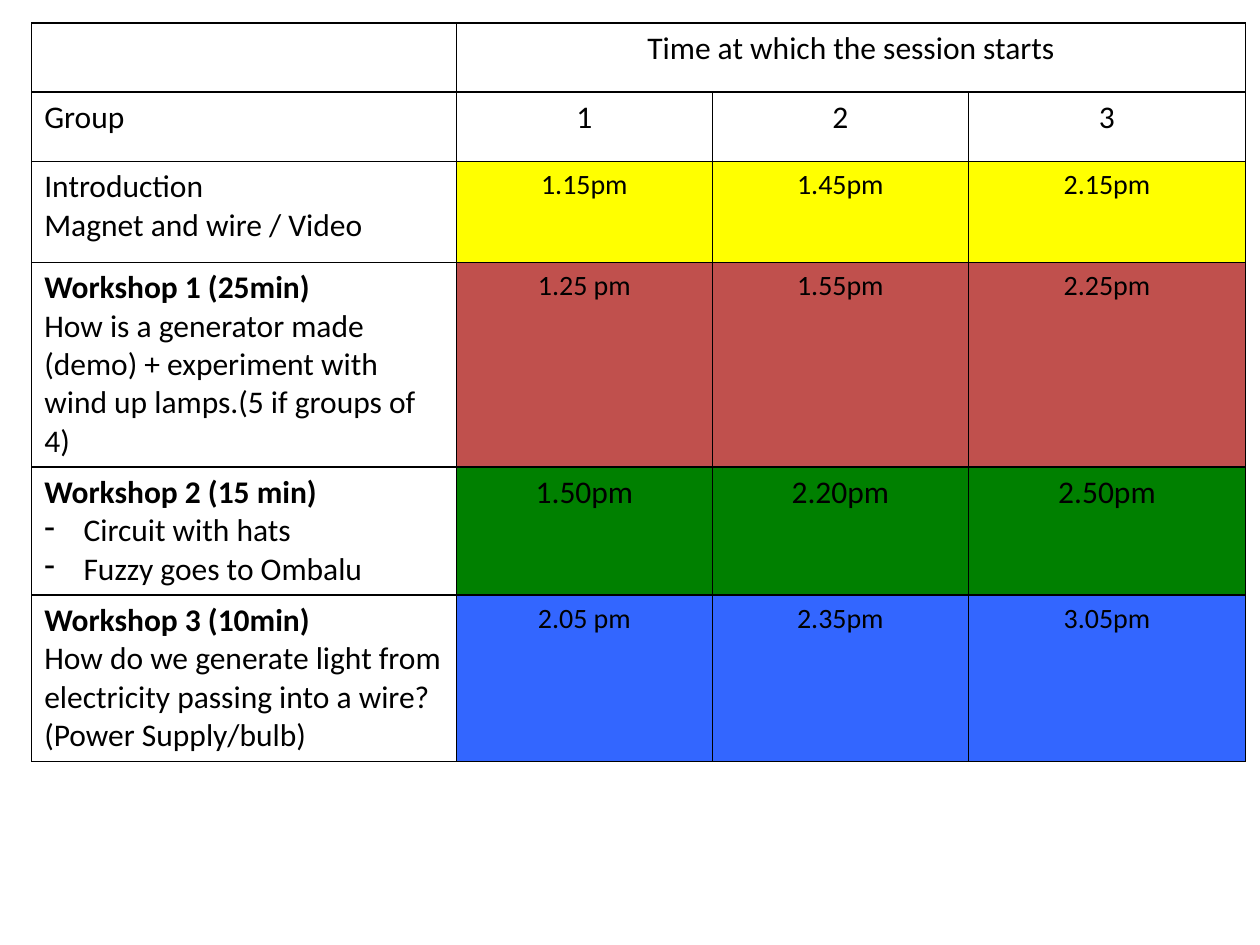
from lxml import etree
from pptx import Presentation
from pptx.dml.color import RGBColor
from pptx.enum import text
from pptx.oxml.ns import qn
from pptx.util import Cm, Pt

# Content: (description lines, session times, fill, time size)
HEADING = "Time at which the session starts"
GROUPS = ("Group", "1", "2", "3")
SESSIONS = [
    (["Introduction", "Magnet and wire / Video"],
     ("1.15pm", "1.45pm", "2.15pm"), "yellow", "small"),
    (["Workshop 1 (25min)",
      "How is a generator made (demo) + experiment with wind up lamps."
      "(5 if groups of 4)"],
     ("1.25 pm", "1.55pm", "2.25pm"), "red", "small"),
    (["Workshop 2 (15 min)", "- Circuit with hats", "- Fuzzy goes to Ombalu"],
     ("1.50pm", "2.20pm", "2.50pm"), "green", "body"),
    (["Workshop 3 (10min)",
      "How do we generate light from electricity passing into a wire?",
      "(Power Supply/bulb)"],
     ("2.05 pm", "2.35pm", "3.05pm"), "blue", "small"),
]

# Theme and layout
THEME = {
    "font": "Calibri", "body": Pt(18), "small": Pt(16), "ink": "000000",
    "yellow": "FFFF00", "red": "C0504D", "green": "008000", "blue": "3366FF",
    "border": Pt(1), "indent": Cm(0.79),
}
COLUMNS = [Cm(w) for w in (8.56, 5.16, 5.16, 5.59)]
ROWS = [Cm(h) for h in (1.4, 1.4, 2.03, 3.71, 1.4, 1.4)]


def draw_borders(cell):
    properties = cell._tc.get_or_add_tcPr()
    for side in ("lnL", "lnR", "lnT", "lnB"):
        line = etree.SubElement(properties, qn(f"a:{side}"), w=str(THEME["border"]))
        fill = etree.SubElement(line, qn("a:solidFill"))
        etree.SubElement(fill, qn("a:srgbClr"), val=THEME["ink"])


def add_dash(paragraph):
    properties = paragraph._p.get_or_add_pPr()
    properties.set("marL", str(THEME["indent"]))
    properties.set("indent", str(-THEME["indent"]))
    bullet = etree.Element(qn("a:buChar"), char="-")
    properties.insert(0, bullet)


def write(cell, lines, size="body", centred=False):
    for index, line in enumerate(lines):
        frame = cell.text_frame
        paragraph = frame.add_paragraph() if index else frame.paragraphs[0]
        paragraph.text = line.removeprefix("- ")
        paragraph.font.name = THEME["font"]
        paragraph.font.size = THEME[size]
        paragraph.font.bold = line.startswith("Workshop")
        paragraph.font.color.rgb = RGBColor.from_string(THEME["ink"])
        if centred:
            paragraph.alignment = text.PP_ALIGN.CENTER
        if line.startswith("- "):
            add_dash(paragraph)


# Slide and empty timetable
deck = Presentation()
deck.slide_width, deck.slide_height = Cm(25.4), Cm(19.05)
slide = deck.slides.add_slide(deck.slide_layouts[6])
timetable = slide.shapes.add_table(
    len(ROWS), len(COLUMNS), Cm(0.64), Cm(0.46), sum(COLUMNS), sum(ROWS)).table
timetable.first_row = timetable.horz_banding = False
for column, width in zip(timetable.columns, COLUMNS):
    column.width = width
for row, height in zip(timetable.rows, ROWS):
    row.height = height
for cell in timetable.iter_cells():
    draw_borders(cell)
    cell.fill.background()

# Header rows
timetable.cell(0, 1).merge(timetable.cell(0, 3))
write(timetable.cell(0, 0), [""])
write(timetable.cell(0, 1), [HEADING], centred=True)
for column, label in enumerate(GROUPS):
    write(timetable.cell(1, column), [label], centred=column > 0)

# Session rows
for row, (description, times, colour, size) in enumerate(SESSIONS, start=2):
    write(timetable.cell(row, 0), description)
    for column, time in enumerate(times, start=1):
        cell = timetable.cell(row, column)
        write(cell, [time], size, centred=True)
        cell.fill.solid()
        cell.fill.fore_color.rgb = RGBColor.from_string(THEME[colour])

deck.save("out.pptx")
